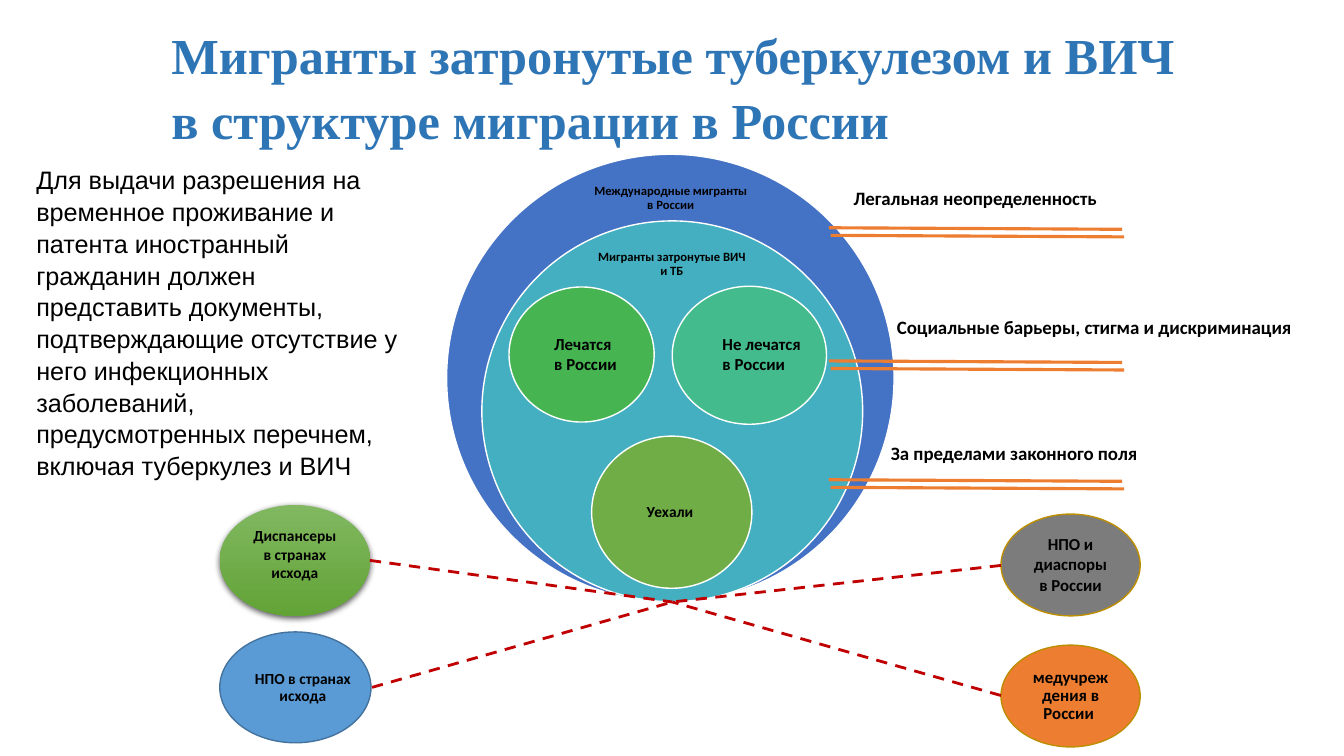
from dataclasses import dataclass
from typing import Optional

import pptx
import pptx.dml.color
import pptx.enum.dml
import pptx.enum.shapes
import pptx.enum.text
import pptx.oxml
import pptx.oxml.ns
import pptx.util
from lxml import etree

Pt = pptx.util.Pt
RGBColor = pptx.dml.color.RGBColor
Align = pptx.enum.text.PP_ALIGN
Anchor = pptx.enum.text.MSO_ANCHOR

BLACK = RGBColor(0x00, 0x00, 0x00)
WHITE = RGBColor(0xFF, 0xFF, 0xFF)
TITLE_BLUE = RGBColor(0x2E, 0x75, 0xB6)
BLUE = RGBColor(0x44, 0x72, 0xC4)
TEAL = RGBColor(0x43, 0xAF, 0xC0)
SEA_GREEN = RGBColor(0x43, 0xBB, 0x8D)
BRIGHT_GREEN = RGBColor(0x45, 0xB4, 0x51)
GREEN = RGBColor(0x70, 0xAD, 0x47)
LIGHT_GREEN = RGBColor(0x81, 0xB8, 0x61)
DARK_GREEN = RGBColor(0x62, 0xA3, 0x36)
SKY_BLUE = RGBColor(0x5B, 0x9B, 0xD5)
STEEL = RGBColor(0x43, 0x73, 0x9E)
GRAY = RGBColor(0x7C, 0x7C, 0x7C)
GOLD = RGBColor(0xBD, 0x8E, 0x00)
ORANGE = RGBColor(0xED, 0x7D, 0x31)
RED = RGBColor(0xC0, 0x00, 0x00)


@dataclass
class Oval:
    left: float
    top: float
    width: float
    height: float
    fill: RGBColor
    outline: Optional[RGBColor] = WHITE
    text: str = ""
    size: float = 12


@dataclass
class Label:
    text: str
    left: float
    top: float
    width: float
    height: float
    size: float
    inset: float = 6.5


@dataclass
class Barrier:
    text: str
    left: float
    top: float
    width: float
    line_top: float


MIGRANT_OVALS = [
    Oval(319, 110.2, 319.6, 319.6, BLUE),
    Oval(344.2, 157.8, 272, 272, TEAL),
    Oval(480.2, 204.5, 110.2, 98.6, SEA_GREEN),
    Oval(363.6, 205, 103.7, 96.5, BRIGHT_GREEN),
    Oval(422.6, 311.5, 114.5, 108.7, GREEN),
]
PARTNER_OVALS = [
    Oval(157, 451.4, 108, 79.2, SKY_BLUE, STEEL),
    Oval(715, 367.2, 99.4, 72.7, GRAY, GOLD, "НПО и диаспоры в России", 12),
    Oval(715, 460.8, 99.4, 72.7, ORANGE, GOLD),
]
DISPENSARIES = Oval(157, 360.7, 107.3, 79.2, GREEN, None, "Диспансеры в странах исхода", 11)
CENTERED_LABELS = [
    Label("Международные мигранты в России", 419, 126, 120.2, 31.7, 9, 5),
    Label("Мигранты затронутые ВИЧ и ТБ", 421.2, 173.5, 117.4, 31, 9, 5),
    Label("Уехали ", 439.2, 338.4, 81.4, 54.7, 11),
    Label("НПО в странах исхода", 168.5, 471.6, 95.8, 39.6, 11),
    Label("медучреждения в России ", 729.4, 478.8, 70.6, 36.7, 12),
]
TREATMENT_LABELS = [
    Label("Не лечатся \vв России", 509, 234.7, 73.4, 36, 12),
    Label("Лечатся \vв России", 388.8, 234.7, 59.8, 36, 12),
]
BARRIERS = [
    Barrier("Легальная неопределенность", 602.6, 129.6, 190, 162.7),
    Barrier("Социальные барьеры, стигма и дискриминация", 633.6, 221.8, 299.5, 257.8),
    Barrier("За пределами законного поля", 629.3, 311.8, 193, 342.7),
]
HUB = (480.2, 430)
PARTNER_POINTS = [(264.2, 400.3), (265.7, 491), (715, 403.9), (715, 496.8)]


def place(shape, left: float, top: float, width: float, height: float) -> None:
    shape.left, shape.top = Pt(left), Pt(top)
    shape.width, shape.height = Pt(width), Pt(height)


def write(shape, text: str, size: float, font: str = "Calibri", color: RGBColor = BLACK,
          bold: bool = True, align: Align = Align.LEFT, spacing: float = 1.0,
          anchor: Anchor = Anchor.TOP, wrap: bool = True) -> None:
    frame = shape.text_frame
    frame.text = text
    frame.auto_size = pptx.enum.text.MSO_AUTO_SIZE.NONE
    frame.word_wrap = wrap
    frame.vertical_anchor = anchor
    for paragraph in frame.paragraphs:
        paragraph.alignment = align
        paragraph.line_spacing = spacing
        paragraph.space_before = Pt(0)
        for run in paragraph.runs:
            run.font.name, run.font.size = font, Pt(size)
            run.font.bold = bold
            run.font.color.rgb = color


def set_insets(shape, inset: float) -> None:
    frame = shape.text_frame
    frame.margin_left = frame.margin_right = Pt(inset)
    frame.margin_top = frame.margin_bottom = Pt(inset)


def add_oval(slide, oval: Oval):
    shape = slide.shapes.add_shape(pptx.enum.shapes.MSO_SHAPE.OVAL, Pt(oval.left), Pt(oval.top),
                                   Pt(oval.width), Pt(oval.height))
    shape.shadow.inherit = False
    shape.fill.solid()
    shape.fill.fore_color.rgb = oval.fill
    if oval.outline is None:
        shape.line.fill.background()
    else:
        shape.line.color.rgb = oval.outline
        shape.line.width = Pt(1)
    if oval.text:
        write(shape, oval.text, oval.size, align=Align.CENTER)
    return shape


def add_label(slide, label: Label, centered: bool) -> None:
    box = slide.shapes.add_textbox(Pt(label.left), Pt(label.top), Pt(label.width), Pt(label.height))
    if centered:
        set_insets(box, label.inset)
        write(box, label.text, label.size, align=Align.CENTER, spacing=0.9, anchor=Anchor.MIDDLE)
    else:
        write(box, label.text, label.size, wrap=False)


def add_line(slide, start: tuple, end: tuple, color: RGBColor, width: float, dashed: bool = False) -> None:
    line = slide.shapes.add_connector(pptx.enum.shapes.MSO_CONNECTOR.STRAIGHT,
                                      *(Pt(value) for value in start + end))
    line.line.color.rgb = color
    line.line.width = Pt(width)
    if dashed:
        line.line.dash_style = pptx.enum.dml.MSO_LINE.DASH
    etree.SubElement(line._element.spPr, pptx.oxml.ns.qn("a:effectLst"))


def add_dispensaries(slide) -> None:
    shape = add_oval(slide, DISPENSARIES)
    shape.fill.gradient()
    shape.fill.gradient_angle = 270
    for stop, color in zip(shape.fill.gradient_stops, (LIGHT_GREEN, DARK_GREEN)):
        stop.color.rgb = color
    effects = shape._element.spPr.find(pptx.oxml.ns.qn("a:effectLst"))
    effects.append(pptx.oxml.parse_xml(
        f'<a:outerShdw {pptx.oxml.ns.nsdecls("a")} blurRad="{Pt(4.5)}" dist="{Pt(1.5)}" dir="5400000"'
        ' rotWithShape="0"><a:srgbClr val="000000"><a:alpha val="63000"/></a:srgbClr></a:outerShdw>'))


def main() -> None:
    presentation = pptx.Presentation()
    presentation.slide_width, presentation.slide_height = Pt(960), Pt(540)
    slide = presentation.slides.add_slide(presentation.slide_layouts[1])

    # Title and body text
    title, body = slide.shapes.title, slide.placeholders[1]
    place(title, 122.4, 14.4, 727.2, 90)
    set_insets(title, 0)
    write(title, "Мигранты затронутые туберкулезом и ВИЧ в структуре миграции в России", 36,
          "Times New Roman", TITLE_BLUE, spacing=1.07)
    place(body, 18.7, 113, 275, 225.4)
    write(body, "Для выдачи разрешения на временное проживание и патента иностранный гражданин должен "
          "представить документы, подтверждающие отсутствие у него инфекционных заболеваний, "
          "предусмотренных перечнем, включая туберкулез и ВИЧ", 18, "Arial", bold=False, spacing=1.05)
    properties = body.text_frame.paragraphs[0]._p.get_or_add_pPr()
    properties.set("marL", "0")
    properties.set("indent", "0")
    etree.SubElement(properties, pptx.oxml.ns.qn("a:buNone"))

    # Nested circles and partner organisations
    for oval in MIGRANT_OVALS + PARTNER_OVALS:
        add_oval(slide, oval)
    add_dispensaries(slide)
    for label in CENTERED_LABELS:
        add_label(slide, label, centered=True)
    for label in TREATMENT_LABELS:
        add_label(slide, label, centered=False)

    # Dashed links from partners to the migrants
    for point in PARTNER_POINTS:
        add_line(slide, point, HUB, RED, 2, dashed=True)

    # Barriers with double lines
    for barrier in BARRIERS:
        for shift_x, shift_y in ((0, 0), (1.4, 5.4)):
            left, top = 592 + shift_x, barrier.line_top + shift_y
            add_line(slide, (left, top), (left + 209.5, top + 1.1), ORANGE, 2.25)
        add_label(slide, Label(barrier.text, barrier.left, barrier.top, barrier.width, 23.8, 13.5), centered=False)

    presentation.save("out.pptx")


if __name__ == "__main__":
    main()
